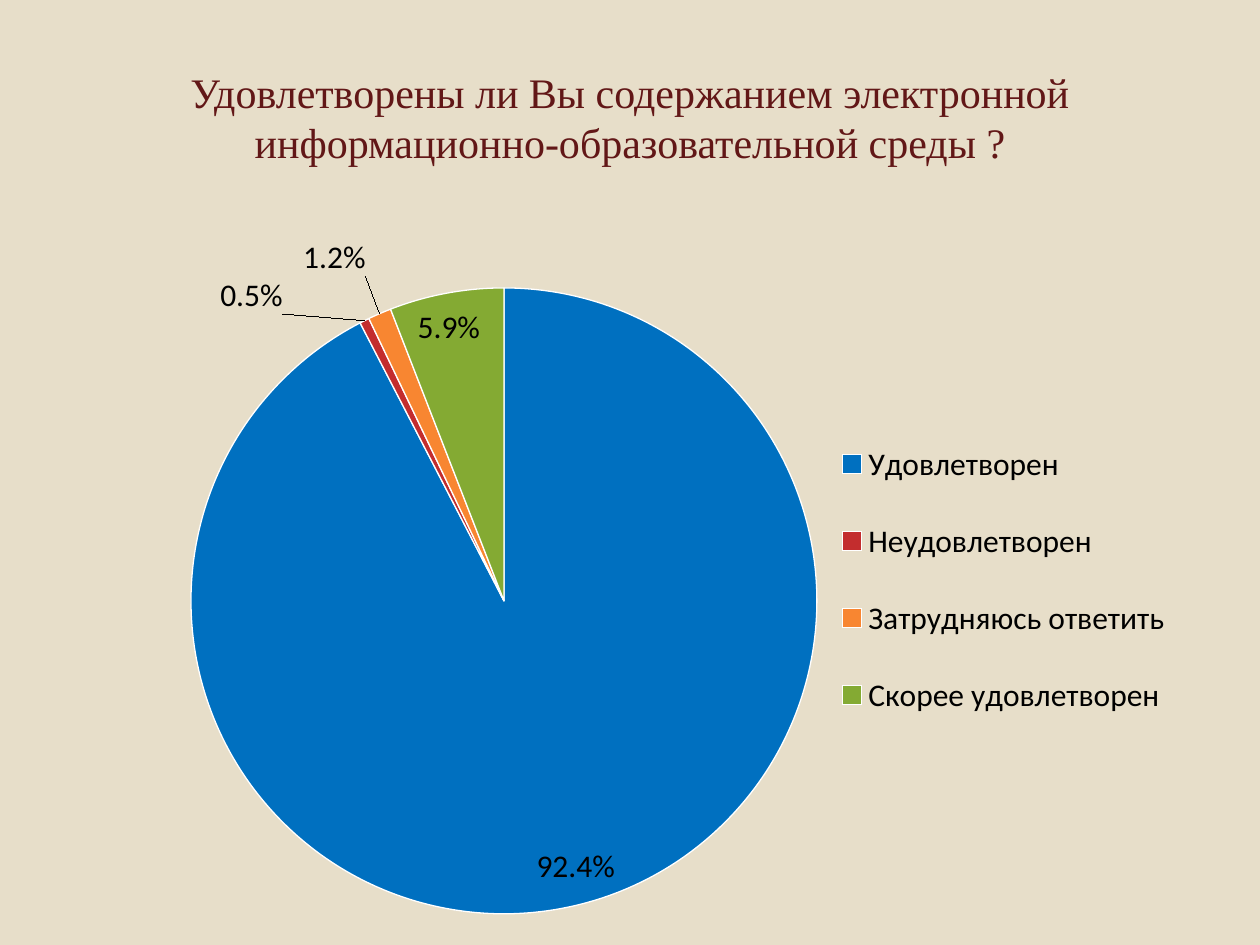
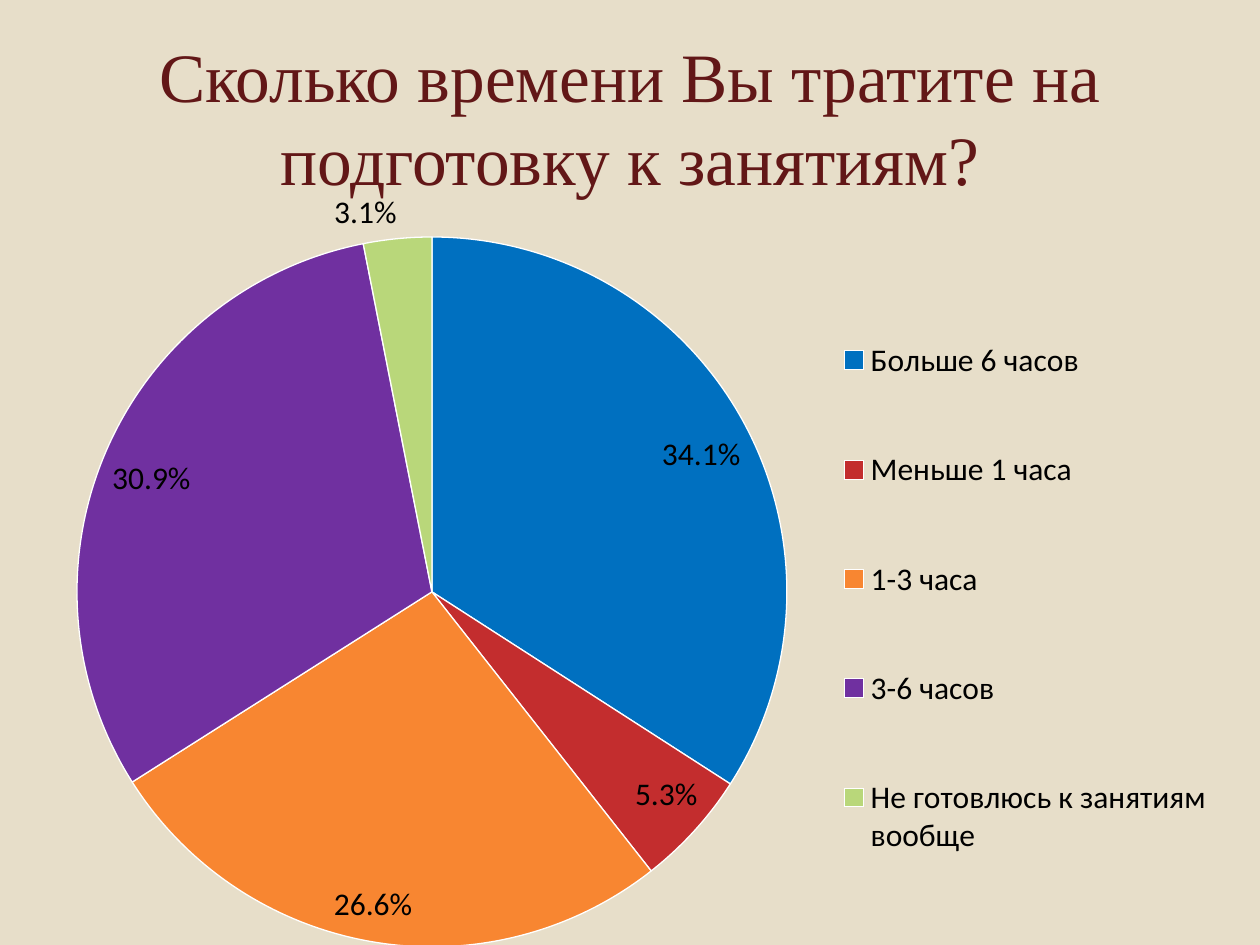
"""Build two survey slides, each with a title and a pie chart."""
import lxml.etree
import pptx
import pptx.chart.data
import pptx.dml.color
import pptx.enum.chart
import pptx.enum.text
import pptx.util

EMU_PER_PX = 914400 / 126
PAGE_SIZE = (1260, 945)
TITLE_BOX = (63, 38, 1134, 157)
BACKGROUND, TITLE_COLOUR, LABEL_COLOUR, EDGE = "E7DEC9", "621717", "000000", "FFFFFF"
BLUE, RED, ORANGE, GREEN = "0070C0", "C32D2E", "F88631", "84AA33"
PURPLE, LIME = "7030A0", "B9D77A"
PERCENT_FORMAT = "0.0%"

SURVEYS = [
    {
        "title": "Удовлетворены ли Вы содержанием электронной информационно-образовательной среды ?",
        "size": 24,
        "chart": (174, 214, 1022, 731),
        "pie": (191, 288, 626, 626),
        "legend": (831, 406, 345, 347),
        "moved_labels": {2: (-11, -30)},
        "answers": [
            ("Удовлетворен", 92.4, BLUE),
            ("Неудовлетворен", 0.5, RED),
            ("Затрудняюсь ответить", 1.2, ORANGE),
            ("Скорее удовлетворен", 5.9, GREEN),
        ],
    },
    {
        "title": "Сколько времени Вы тратите на подготовку к занятиям?",
        "size": 39.6,
        "chart": (44, 175, 1191, 790),
        "pie": (77, 237, 710, 710),
        "legend": (833, 270, 385, 656),
        "moved_labels": {},
        "answers": [
            ("Больше 6 часов", 34.1, BLUE),
            ("Меньше 1 часа", 5.3, RED),
            ("1-3 часа", 26.6, ORANGE),
            ("3-6 часов", 30.9, PURPLE),
            ("Не готовлюсь к занятиям вообще", 3.1, LIME),
        ],
    },
]


def colour(value):
    return pptx.dml.color.RGBColor.from_string(value)


def add_text(page, text, *, frame, size, font, fill):
    box = page.shapes.add_textbox(*[round(side * EMU_PER_PX) for side in frame])
    box.text_frame.word_wrap = True
    box.text_frame.vertical_anchor = pptx.enum.text.MSO_ANCHOR.MIDDLE
    para = box.text_frame.paragraphs[0]
    para.alignment = pptx.enum.text.PP_ALIGN.CENTER
    span = para.add_run()
    span.text = text
    span.font.size = pptx.util.Pt(size)
    span.font.name = font
    span.font.color.rgb = colour(fill)


deck = pptx.Presentation()
deck.slide_width, deck.slide_height = [round(side * EMU_PER_PX) for side in PAGE_SIZE]

for survey in SURVEYS:
    page = deck.slides.add_slide(deck.slide_layouts[6])
    page.background.fill.solid()
    page.background.fill.fore_color.rgb = colour(BACKGROUND)
    add_text(page, survey["title"], frame=TITLE_BOX, size=survey["size"],
             font="Times New Roman", fill=TITLE_COLOUR)

    names, shares, fills = zip(*survey["answers"])
    chart_data = pptx.chart.data.CategoryChartData()
    chart_data.categories = names
    chart_data.add_series("Series 1", shares)
    frame = [round(side * EMU_PER_PX) for side in survey["chart"]]
    chart = page.shapes.add_chart(pptx.enum.chart.XL_CHART_TYPE.PIE, *frame, chart_data).chart
    chart.has_title = False
    chart.font.size = pptx.util.Pt(18)
    chart.font.name = "Calibri"
    chart.font.color.rgb = colour(LABEL_COLOUR)
    chart.has_legend = True
    chart.legend.position = pptx.enum.chart.XL_LEGEND_POSITION.RIGHT
    chart.legend.include_in_layout = False

    pie = chart.plots[0]
    pie.vary_by_categories = True
    series = pie.series[0]
    for index, fill in enumerate(fills):
        slice_format = series.points[index].format
        slice_format.fill.solid()
        slice_format.fill.fore_color.rgb = colour(fill)
        slice_format.line.color.rgb = colour(EDGE)
        slice_format.line.width = pptx.util.Pt(0.75)

    labels = series.data_labels
    labels.show_value = False
    labels.show_percentage = True
    labels.number_format = PERCENT_FORMAT
    labels.number_format_is_linked = False
    labels.position = pptx.enum.chart.XL_LABEL_POSITION.BEST_FIT

    chart_left, chart_top, chart_width, chart_height = survey["chart"]
    legend_node = chart.legend._element
    plot_node = legend_node.getparent().xpath("c:plotArea")[0]
    namespace = "{%s}" % lxml.etree.QName(plot_node).namespace
    layouts = []
    for part, node, place in (("pie", plot_node, 0), ("legend", legend_node, 1)):
        left, top, width, height = survey[part]
        settings = [("layoutTarget", "inner")] if part == "pie" else []
        settings += [
            ("xMode", "edge"),
            ("yMode", "edge"),
            ("x", (left - chart_left) / chart_width),
            ("y", (top - chart_top) / chart_height),
            ("w", width / chart_width),
            ("h", height / chart_height),
        ]
        layouts.append((node, place, settings))

    for index, (right, down) in survey["moved_labels"].items():
        label = series.points[index].data_label
        label.position = pptx.enum.chart.XL_LABEL_POSITION.BEST_FIT
        node = series._element.xpath(f"c:dLbls/c:dLbl[c:idx/@val={index}]")[0]
        node.xpath("c:showVal")[0].set("val", "0")
        node.xpath("c:showPercent")[0].set("val", "1")
        number_format = node.makeelement(namespace + "numFmt")
        number_format.set("formatCode", PERCENT_FORMAT)
        number_format.set("sourceLinked", "0")
        node.insert(1, number_format)
        layouts.append((node, 1, [("x", right / chart_width), ("y", down / chart_height)]))

    for node, place, settings in layouts:
        for old_layout in node.xpath("c:layout"):
            node.remove(old_layout)
        layout = node.makeelement(namespace + "layout")
        node.insert(place, layout)
        manual = lxml.etree.SubElement(layout, namespace + "manualLayout")
        for tag, value in settings:
            text = value if isinstance(value, str) else f"{value:.4f}"
            lxml.etree.SubElement(manual, namespace + tag).set("val", text)

deck.save("out.pptx")
